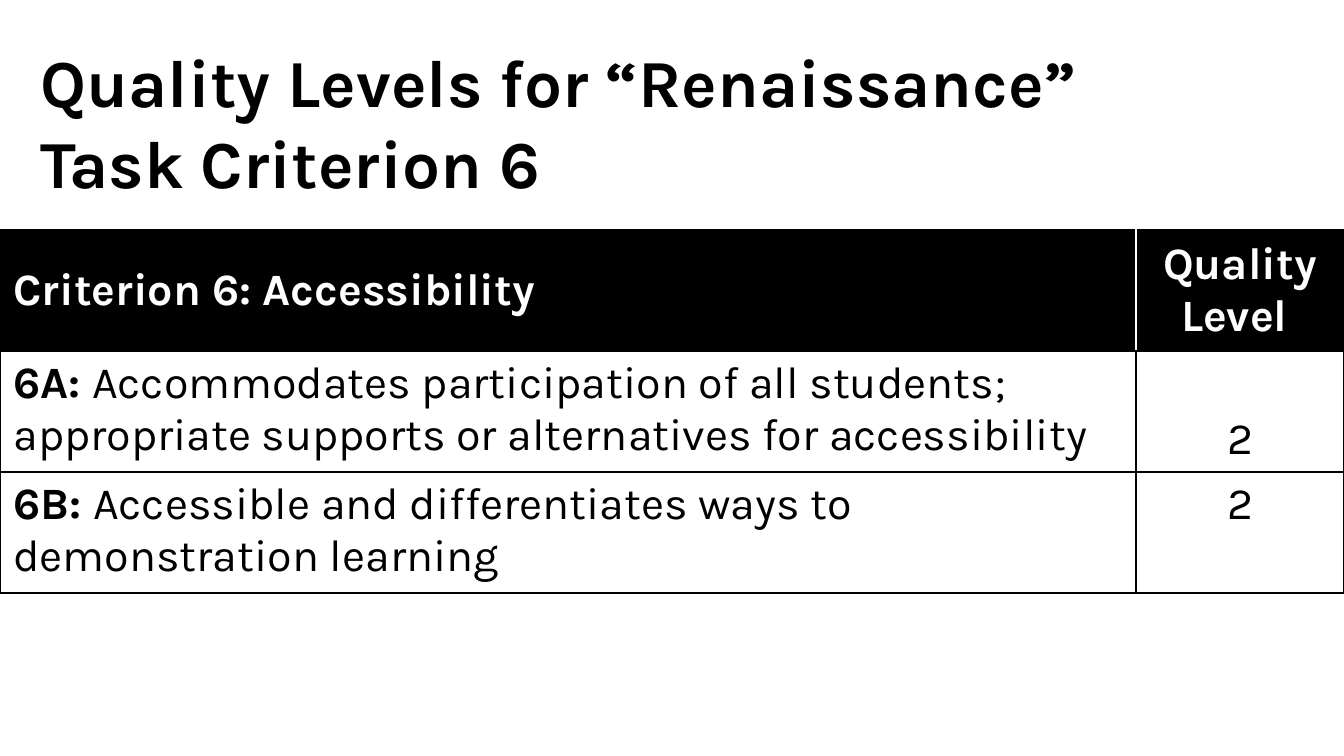
from lxml.etree import SubElement
from pptx import Presentation
from pptx.dml.color import RGBColor
from pptx.enum.text import MSO_ANCHOR as Anchor, PP_ALIGN as Align
from pptx.oxml.ns import qn
from pptx.util import Emu, Pt

FONT = "Karla"
BLACK, WHITE = "000000", "FFFFFF"
PX_PER_INCH = 134.4
TITLE = "Quality Levels for “Renaissance” Task Criterion 6"
HEADINGS = ["Criterion 6: Accessibility", "Quality Level "]
CRITERIA = [
    ("6A: ", "Accommodates participation of all students; "
     "appropriate supports or alternatives for accessibility", "2", Anchor.BOTTOM),
    ("6B: ", "Accessible and differentiates ways to demonstration learning",
     "2", Anchor.TOP),
]


def px(length):
    return Emu(round(length * 914400 / PX_PER_INCH))


def paint(color_format, hex_color):
    color_format.rgb = RGBColor.from_string(hex_color)


def write(paragraph, text, size, bold=False, color=BLACK):
    run = paragraph.add_run()
    run.text = text
    for key, value in {"name": FONT, "size": Pt(size), "bold": bold}.items():
        setattr(run.font, key, value)
    paint(run.font.color, color)


def set_borders(cell, right=BLACK, left=BLACK):
    """Draw the four cell edges; only the side edges vary in colour."""
    properties = cell._tc.get_or_add_tcPr()
    edges = {"a:lnL": left, "a:lnR": right, "a:lnT": BLACK, "a:lnB": BLACK}
    for tag, color in edges.items():
        edge = SubElement(properties, qn(tag), w=str(Pt(0.75)))
        fill = SubElement(edge, qn("a:solidFill"))
        SubElement(fill, qn("a:srgbClr"), val=color)


def add_title(slide, left, top, width, height):
    frame = slide.shapes.add_textbox(px(left), px(top), px(width), px(height)).text_frame
    for key, value in {"word_wrap": True, "vertical_anchor": Anchor.MIDDLE}.items():
        setattr(frame, key, value)
    write(frame.paragraphs[0], TITLE, 36, bold=True)


def add_criteria_table(slide, left, top, width, height):
    row_count = len(CRITERIA) + 1
    level_width = 208
    table = slide.shapes.add_table(row_count, 2, px(left), px(top),
                                   px(width), px(height)).table
    for key in ("first_row", "horz_banding"):
        setattr(table, key, False)
    for column, size in zip(table.columns, (width - level_width, level_width)):
        column.width = px(size)
    for row in table.rows:
        row.height = px(height / row_count)

    for index, heading in enumerate(HEADINGS):
        cell = table.cell(0, index)
        set_borders(cell, **{("right", "left")[index]: WHITE})
        cell.fill.solid()
        paint(cell.fill.fore_color, BLACK)
        cell.vertical_anchor = Anchor.MIDDLE
        write(cell.text_frame.paragraphs[0], heading, 24, bold=True, color=WHITE)

    for index, (code, description, level, anchor) in enumerate(CRITERIA, 1):
        criterion_cell, level_cell = table.cell(index, 0), table.cell(index, 1)
        for cell in (criterion_cell, level_cell):
            set_borders(cell)
            cell.fill.background()
        criterion = criterion_cell.text_frame.paragraphs[0]
        write(criterion, code, 24, bold=True)
        write(criterion, description, 24)
        level_cell.vertical_anchor = anchor
        write(level_cell.text_frame.paragraphs[0], level, 24)

    for index in range(row_count):
        table.cell(index, 1).text_frame.paragraphs[0].alignment = Align.CENTER


def main():
    deck = Presentation()
    deck.slide_width, deck.slide_height = px(1344), px(756)
    slide = deck.slides.add_slide(deck.slide_layouts[6])
    add_title(slide, 27, 31, 1210, 180)
    add_criteria_table(slide, 0, 230, 1344, 354)
    deck.save("out.pptx")


if __name__ == "__main__":
    main()
